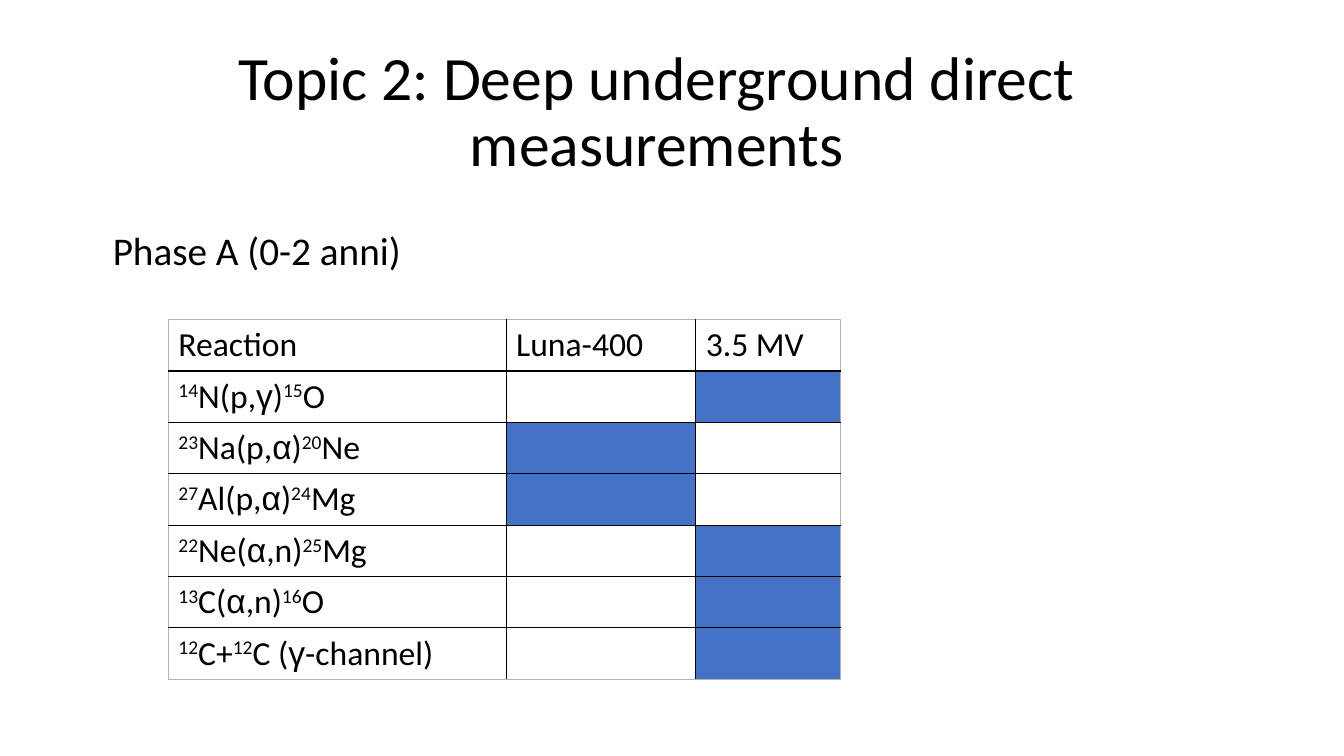
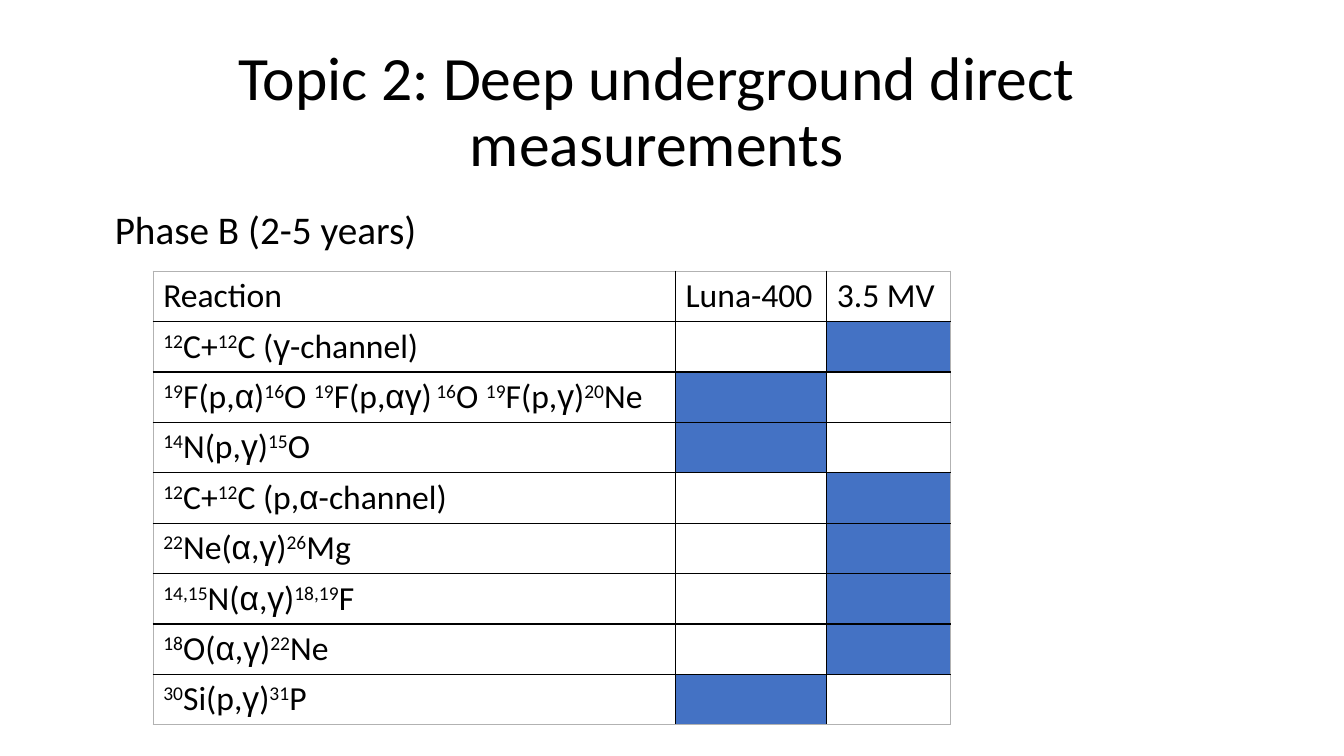
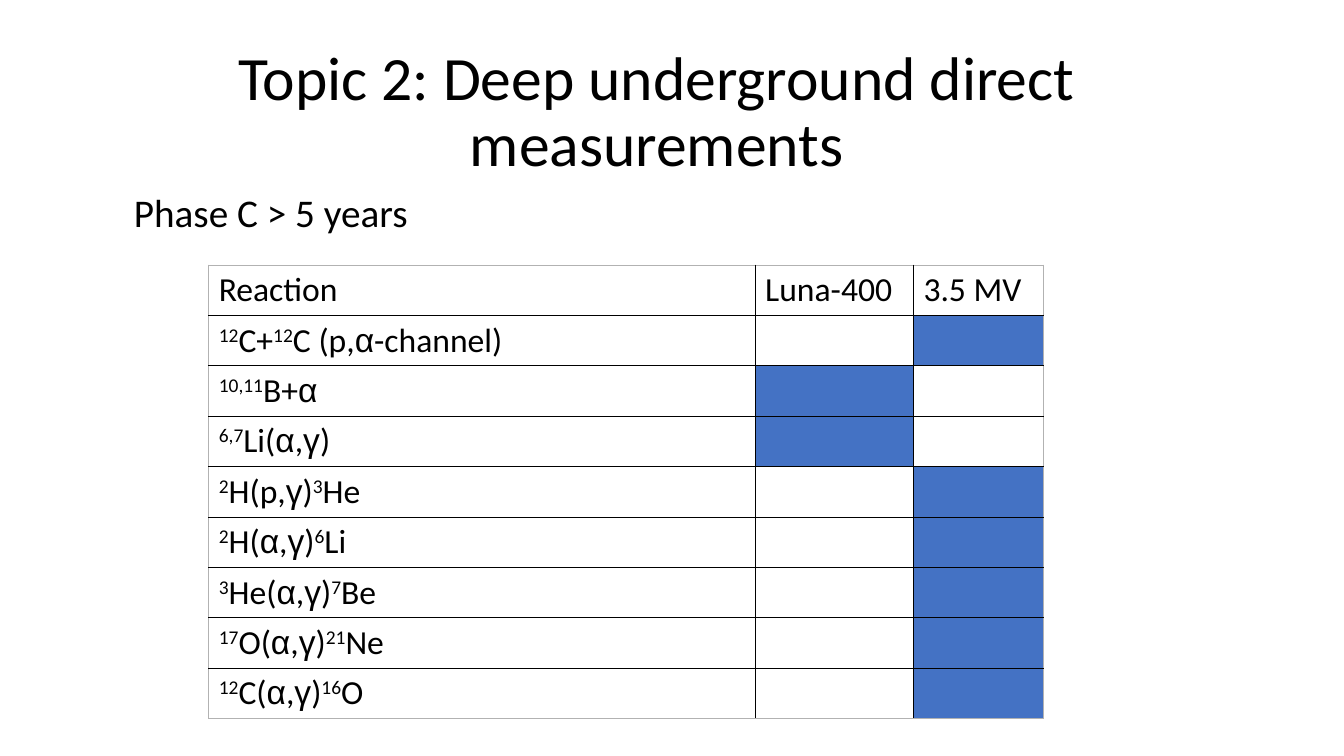
"""Build three slides of planned deep underground reaction measurements."""
from itertools import groupby

from lxml import etree
from pptx import Presentation
from pptx.dml.color import RGBColor
from pptx.enum.text import MSO_ANCHOR, MSO_AUTO_SIZE, PP_ALIGN
from pptx.oxml.ns import qn
from pptx.util import Inches, Pt

MIDDLE = MSO_ANCHOR.MIDDLE
CENTER = PP_ALIGN.CENTER
NO_FIT, GROW = MSO_AUTO_SIZE.NONE, MSO_AUTO_SIZE.SHAPE_TO_FIT_TEXT

COLORS = {"text": "000000", "planned": "4472C4", "inner": "000000", "outer": "B2B2B2"}
FONT, GREEK_FONT = "Calibri", "Arial"
GREEK = "αγ"
TITLE = "Topic 2: Deep underground direct measurements"
HEADER = ["Reaction", "Luna-400", "3.5 MV"]
LUNA, MV = 1, 2

PHASES = [
    {
        "label": "Phase A (0-2 anni)", "label_at": (1.02, 2.2),
        "table_at": (1.67, 3.17), "cols": [3.35, 1.88, 1.44], "row_height": 0.51,
        "reactions": [
            ("^14^N(p,γ)^15^O", MV),
            ("^23^Na(p,α)^20^Ne", LUNA),
            ("^27^Al(p,α)^24^Mg", LUNA),
            ("^22^Ne(α,n)^25^Mg", MV),
            ("^13^C(α,n)^16^O", MV),
            ("^12^C+^12^C (γ-channel)", MV),
        ],
    },
    {
        "label": "Phase B (2-5 years)", "label_at": (1.04, 1.99),
        "table_at": (1.52, 2.69), "cols": [5.18, 1.5, 1.23], "row_height": 0.5,
        "reactions": [
            ("^12^C+^12^C (γ-channel)", MV),
            ("^19^F(p,α)^16^O ^19^F(p,αγ)^ 16^O ^19^F(p,γ)^20^Ne", LUNA),
            ("^14^N(p,γ)^15^O", LUNA),
            ("^12^C+^12^C (p,α-channel)", MV),
            ("^22^Ne(α,γ)^26^Mg", MV),
            ("^14,15^N(α,γ)^18,19^F", MV),
            ("^18^O(α,γ)^22^Ne", MV),
            ("^30^Si(p,γ)^31^P", LUNA),
        ],
    },
    {
        "label": "Phase C > 5 years", "label_at": (1.23, 1.82),
        "table_at": (2.07, 2.63), "cols": [5.42, 1.57, 1.29], "row_height": 0.5,
        "reactions": [
            ("^12^C+^12^C (p,α-channel)", MV),
            ("^10,11^B+α", LUNA),
            ("^6,7^Li(α,γ)", LUNA),
            ("^2^H(p,γ)^3^He", MV),
            ("^2^H(α,γ)^6^Li", MV),
            ("^3^He(α,γ)^7^Be", MV),
            ("^17^O(α,γ)^21^Ne", MV),
            ("^12^C(α,γ)^16^O", MV),
        ],
    },
]


def add_run(p, text, size, font=FONT, superscript=False):
    """Append one formatted run to a paragraph."""
    r = p.add_run()
    r.text = text
    r.font.name = font
    r.font.size = Pt(size)
    r.font.color.rgb = RGBColor.from_string(COLORS["text"])
    if superscript:
        r.font._element.set("baseline", "30000")


def add_reaction(p, notation):
    """Write a reaction whose superscripts stand between carets."""
    for i, part in enumerate(notation.split("^")):
        for greek, letters in groupby(part, lambda letter: letter in GREEK):
            font = GREEK_FONT if greek else FONT
            add_run(p, "".join(letters), 24, font, superscript=i % 2 == 1)


def place_layout_title(layout):
    """Set the position of the title that all slides inherit."""
    sp = next(s for s in layout.placeholders if s.placeholder_format.idx == 0)
    sp.left, sp.top = Inches(0.61), Inches(0.4)
    sp.width, sp.height = Inches(11.81), Inches(1.45)


def add_title(slide):
    """Fill the title placeholder."""
    tf = slide.shapes.title.text_frame
    tf.auto_size = NO_FIT
    tf.vertical_anchor = MIDDLE
    p = tf.paragraphs[0]
    p.alignment = CENTER
    p.line_spacing = 0.9
    add_run(p, TITLE, 44)


def add_label(slide, text, at):
    """Add the phase label above the table."""
    left, top = at
    sp = slide.shapes.add_textbox(Inches(left), Inches(top), Inches(3.38), Inches(0.57))
    tf = sp.text_frame
    tf.word_wrap = True
    tf.auto_size = GROW
    add_run(tf.paragraphs[0], text, 28)


def add_border(cell, side, color):
    """Draw one solid cell edge."""
    ln = etree.SubElement(cell._tc.get_or_add_tcPr(), qn(f"a:ln{side}"), w=str(Pt(1)))
    fill = etree.SubElement(ln, qn("a:solidFill"))
    etree.SubElement(fill, qn("a:srgbClr"), val=color)


def format_cell(cell, outer_sides, planned):
    """Set the margins, borders and fill of a cell."""
    cell.margin_top = cell.margin_bottom = Inches(0.04)
    cell.vertical_anchor = MIDDLE
    for side, is_outer in outer_sides.items():
        add_border(cell, side, COLORS["outer" if is_outer else "inner"])
    if planned:
        cell.fill.solid()
        cell.fill.fore_color.rgb = RGBColor.from_string(COLORS["planned"])
    else:
        cell.fill.background()


def add_reaction_table(slide, phase):
    """Add the table that marks the accelerator planned for each reaction."""
    left, top = phase["table_at"]
    cols, reactions, row_height = phase["cols"], phase["reactions"], phase["row_height"]
    last_row, last_col = len(reactions), len(cols) - 1
    table = slide.shapes.add_table(
        last_row + 1, len(cols), Inches(left), Inches(top),
        Inches(sum(cols)), Inches(row_height * (last_row + 1))).table
    table.first_row = table.horz_banding = False
    for column, width in zip(table.columns, cols):
        column.width = Inches(width)
    for i, row in enumerate(table.rows):
        row.height = Inches(row_height)
        for j, cell in enumerate(row.cells):
            outer = {"L": j == 0, "R": j == last_col, "T": i == 0, "B": i == last_row}
            format_cell(cell, outer, i > 0 and reactions[i - 1][1] == j)
    for cell, text in zip(table.rows[0].cells, HEADER):
        add_run(cell.text_frame.paragraphs[0], text, 24)
    for i, (notation, _) in enumerate(reactions, start=1):
        add_reaction(table.cell(i, 0).text_frame.paragraphs[0], notation)


def main():
    """Build and save the presentation."""
    prs = Presentation()
    prs.slide_width, prs.slide_height = Inches(13.33), Inches(7.5)
    layout = prs.slide_layouts.get_by_name("Title Only")
    place_layout_title(layout)
    for phase in PHASES:
        slide = prs.slides.add_slide(layout)
        add_title(slide)
        add_label(slide, phase["label"], phase["label_at"])
        add_reaction_table(slide, phase)
    prs.save("out.pptx")


if __name__ == "__main__":
    main()
